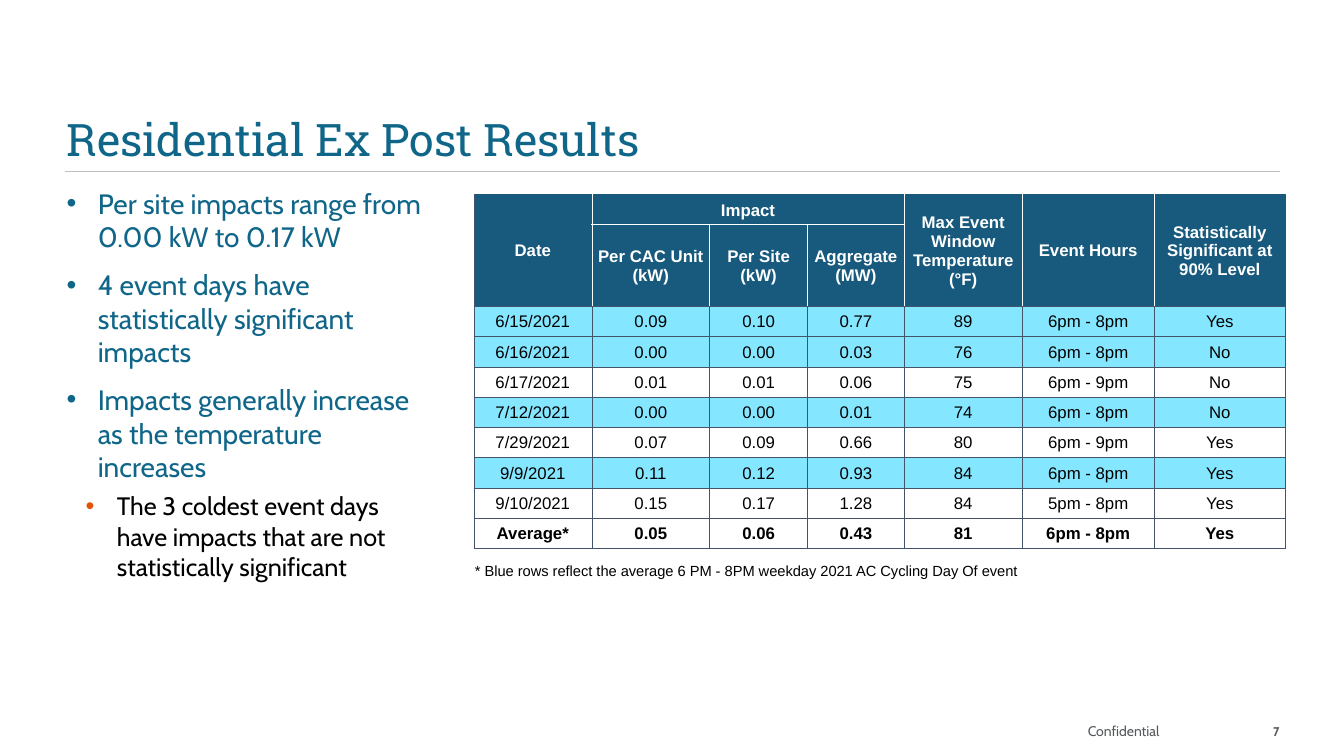
import pptx
import pptx.dml.color
import pptx.enum.shapes
import pptx.enum.text
import pptx.oxml.ns
import pptx.util
from lxml import etree

Inches = pptx.util.Inches
Pt = pptx.util.Pt
ALIGN = pptx.enum.text.PP_ALIGN
ANCHOR = pptx.enum.text.MSO_ANCHOR
qn = pptx.oxml.ns.qn

TEAL, ORANGE, GRAY = "0F6689", "E35205", "54585A"
HEADER, EVENT_BLUE, GRID = "185A7D", "84E7FF", "44546A"
WHITE, BLACK = "FFFFFF", "000000"

BULLETS = [
    ("Per site impacts range from 0.00 kW to 0.17 kW", 1),
    ("4 event days have statistically significant impacts", 1),
    ("Impacts generally increase as the temperature increases", 1),
    ("The 3 coldest event days have impacts that are not statistically significant", 2),
]
LEVELS = {
    1: {"indent": 0.31, "before": 10, "bullet": TEAL, "size": 20, "color": TEAL},
    2: {"indent": 0.5, "before": 5.3, "bullet": ORANGE, "size": 18, "color": BLACK},
}
COLUMN_WIDTHS = [1.17, 1.17, 0.97, 0.96, 1.17, 1.31, 1.3]
ROW_HEIGHT, SUBHEADER_HEIGHT = 0.3, 0.76
HEADER_ROWS = [
    ["Date", "Impact", "", "", "Max Event Window Temperature (°F)", "Event Hours",
     "Statistically Significant at 90% Level"],
    ["", "Per CAC Unit (kW)", "Per Site (kW)", "Aggregate (MW)", "", "", ""],
]
EVENT_ROWS = [
    ["6/15/2021", "0.09", "0.10", "0.77", "89", "6pm - 8pm", "Yes"],
    ["6/16/2021", "0.00", "0.00", "0.03", "76", "6pm - 8pm", "No"],
    ["6/17/2021", "0.01", "0.01", "0.06", "75", "6pm - 9pm", "No"],
    ["7/12/2021", "0.00", "0.00", "0.01", "74", "6pm - 8pm", "No"],
    ["7/29/2021", "0.07", "0.09", "0.66", "80", "6pm - 9pm", "Yes"],
    ["9/9/2021", "0.11", "0.12", "0.93", "84", "6pm - 8pm", "Yes"],
    ["9/10/2021", "0.15", "0.17", "1.28", "84", "5pm - 8pm", "Yes"],
]
AVERAGE_ROW = ["Average*", "0.05", "0.06", "0.43", "81", "6pm - 8pm", "Yes"]
FOOTNOTE = "* Blue rows reflect the average 6 PM - 8PM weekday 2021 AC Cycling Day Of event"


def color(value):
    return pptx.dml.color.RGBColor.from_string(value)


def set_all(target, values):
    for name, value in values.items():
        setattr(target, name, value)


def add_span(para, text, name, size, shade, bold=False):
    span = para.add_run()
    span.text = text
    set_all(span.font, {"name": name, "size": Pt(size), "bold": bold})
    span.font.color.rgb = color(shade)


def add_text_frame(page, box, anchor, left=0, right=0):
    frame = page.shapes.add_textbox(*map(Inches, box)).text_frame
    set_all(frame, {
        "word_wrap": True, "vertical_anchor": anchor,
        "margin_left": Inches(left), "margin_right": Inches(right),
        "margin_top": Inches(0.05), "margin_bottom": Inches(0.05),
    })
    return frame


def add_title(page, box):
    left, top, width, height = box
    para = add_text_frame(page, box, ANCHOR.BOTTOM, right=1.5).paragraphs[0]
    para.line_spacing = 0.9
    add_span(para, "Residential Ex Post Results", "Roboto Slab", 32, TEAL)

    # Rule under the title
    y = Inches(top + height)
    rule = page.shapes.add_connector(
        pptx.enum.shapes.MSO_CONNECTOR.STRAIGHT,
        Inches(left - 0.02), y, Inches(left + width + 0.03), y)
    rule.line.color.rgb = color("BFBFBF")
    rule.line.width = Pt(1)
    etree.SubElement(rule._element.spPr, qn("a:effectLst"))


def add_findings(page, box):
    frame = add_text_frame(page, box, ANCHOR.TOP, right=0.1)
    for index, (text, level) in enumerate(BULLETS):
        look = LEVELS[level]
        para = frame.add_paragraph() if index else frame.paragraphs[0]
        para.level = level - 1
        if index:
            para.space_before = Pt(look["before"])
        props = para._p.get_or_add_pPr()
        props.set("marL", str(Inches(look["indent"])))
        props.set("indent", str(Inches(-0.31)))
        shade = etree.SubElement(props, qn("a:buClr"))
        etree.SubElement(shade, qn("a:srgbClr"), val=look["bullet"])
        etree.SubElement(props, qn("a:buFont"), typeface="Arial")
        etree.SubElement(props, qn("a:buChar"), char="•")
        add_span(para, text, "Cabin", look["size"], look["color"])


def set_borders(cell, borders):
    props = cell._tc.get_or_add_tcPr()
    for side in "LRTB":
        shade = borders.get(side)
        line = etree.SubElement(props, qn("a:ln" + side), w=str(Pt(0.5)))
        if shade:
            fill = etree.SubElement(line, qn("a:solidFill"))
            etree.SubElement(fill, qn("a:srgbClr"), val=shade)
        else:
            etree.SubElement(line, qn("a:noFill"))


def header_borders(cell, row, column):
    last = len(COLUMN_WIDTHS) - 1
    return {
        "L": WHITE if column else GRID,
        "R": HEADER if column == last else WHITE,
        "T": WHITE if row and not cell.is_spanned else HEADER,
        "B": GRID if row or cell.span_height == 2 else WHITE,
    }


def fill_cell(cell, text, borders, fill=None, shade=BLACK, bold=False, size=12,
              align=ALIGN.CENTER, anchor=ANCHOR.MIDDLE):
    set_all(cell, {
        "vertical_anchor": anchor, "margin_left": Inches(0.01),
        "margin_right": Inches(0.01), "margin_top": Inches(0.01), "margin_bottom": 0,
    })
    set_borders(cell, borders)
    if fill:
        cell.fill.solid()
        cell.fill.fore_color.rgb = color(fill)
    else:
        cell.fill.background()
    para = cell.text_frame.paragraphs[0]
    para.alignment = align
    add_span(para, text, "Arial", size, shade, bold)


def add_results(page, box):
    body = EVENT_ROWS + [AVERAGE_ROW]
    footer = len(HEADER_ROWS) + len(body)
    table = page.shapes.add_table(
        footer + 1, len(COLUMN_WIDTHS), *map(Inches, box)).table
    set_all(table, {"first_row": False, "horz_banding": False})
    for column, width in zip(table.columns, COLUMN_WIDTHS):
        column.width = Inches(width)
    for index, row in enumerate(table.rows):
        row.height = Inches(SUBHEADER_HEIGHT if index == 1 else ROW_HEIGHT)

    # Merged cells
    for column in (0, 4, 5, 6):
        table.cell(0, column).merge(table.cell(1, column))
    table.cell(0, 1).merge(table.cell(0, 3))
    table.cell(footer, 0).merge(table.cell(footer, 4))

    # Header
    for row, labels in enumerate(HEADER_ROWS):
        for column, text in enumerate(labels):
            cell = table.cell(row, column)
            fill_cell(cell, text, header_borders(cell, row, column),
                      HEADER, WHITE, bold=True)

    # Event days and their average
    for row, values in enumerate(body, len(HEADER_ROWS)):
        average = values is AVERAGE_ROW
        blue = values[5] == "6pm - 8pm" and not average
        for column, text in enumerate(values):
            fill_cell(table.cell(row, column), text, dict.fromkeys("LRTB", GRID),
                      EVENT_BLUE if blue else WHITE, bold=average)

    # Footnote
    for column in range(len(COLUMN_WIDTHS)):
        fill_cell(table.cell(footer, column), "" if column else FOOTNOTE, {"T": GRID},
                  size=10.5, align=ALIGN.LEFT, anchor=ANCHOR.BOTTOM)


def add_footer(page, box):
    left, top, width, height = box
    label = add_text_frame(page, (left, top, 1.29, height), ANCHOR.BOTTOM, left=0.1)
    add_span(label.paragraphs[0], "Confidential", "Cabin", 10, GRAY)
    number_box = (left + width - 0.57, top, 0.57, height)
    number = add_text_frame(page, number_box, ANCHOR.BOTTOM, left=0.1).paragraphs[0]
    number.alignment = ALIGN.RIGHT
    add_span(number, "7", "Cabin", 9, GRAY, bold=True)


def main():
    deck = pptx.Presentation()
    set_all(deck, {"slide_width": Inches(13.33), "slide_height": Inches(7.5)})
    page = deck.slides.add_slide(deck.slide_layouts[6])
    add_title(page, (0.66, 0.7, 12.01, 1))
    add_findings(page, (0.66, 1.8, 3.69, 4.86))
    add_results(page, (4.7, 1.93, 8.04, 3.73))
    add_footer(page, (10.69, 6.98, 2, 0.4))
    deck.save("out.pptx")


if __name__ == "__main__":
    main()
